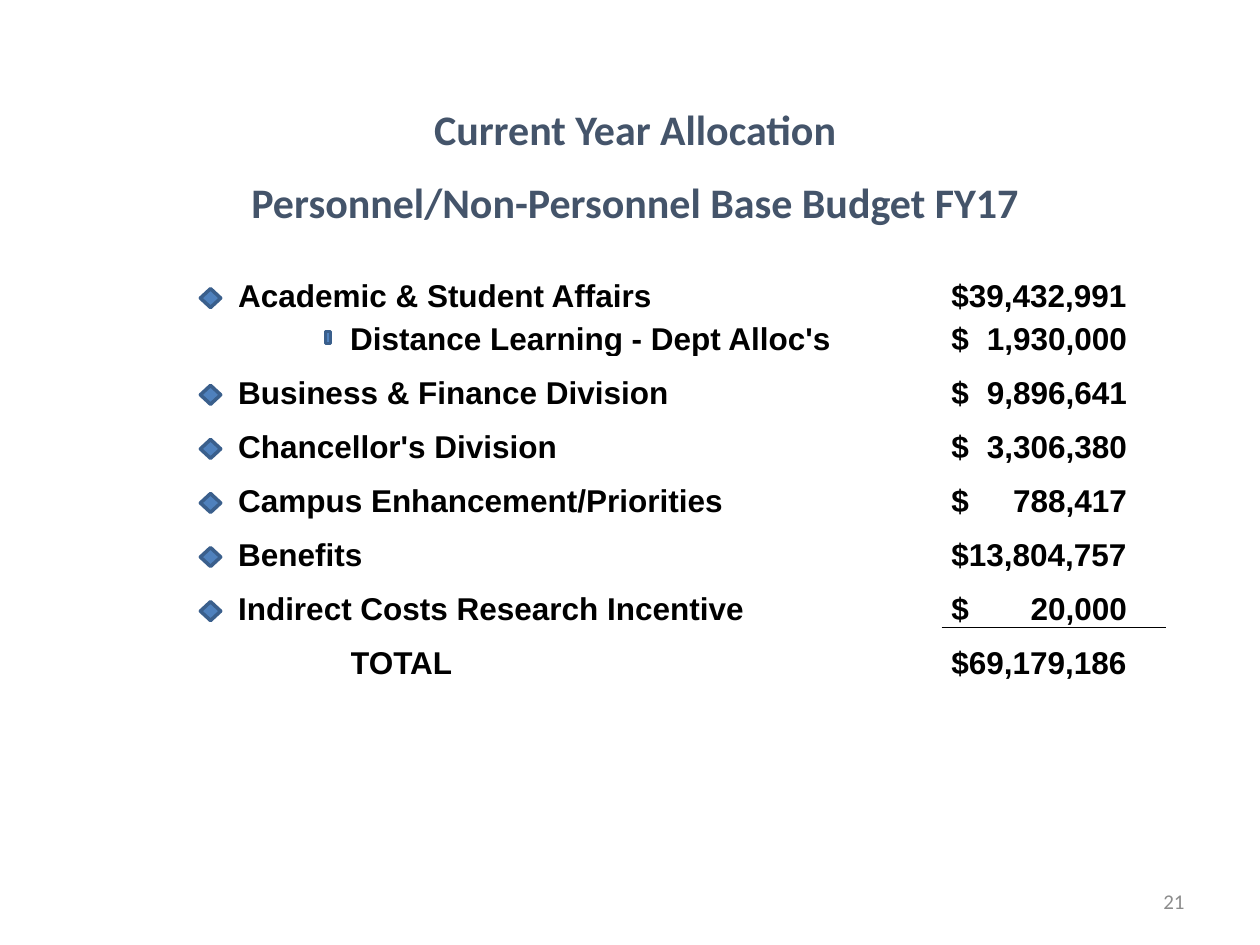
from lxml.etree import SubElement as Sub
from pptx import Presentation
from pptx.dml.color import RGBColor
from pptx.enum.shapes import MSO_SHAPE as Kind
from pptx.enum.text import MSO_ANCHOR as Anchor, PP_ALIGN as Align
from pptx.oxml import parse_xml
from pptx.oxml.ns import nsdecls, qn
from pptx.util import Cm, Pt

HEADS = ["Current Year Allocation", "Personnel/Non-Personnel Base Budget FY17"]
ITEMS = [
    ("Academic & Student Affairs", "$39,432,991", 1, 2),
    ("Distance Learning - Dept Alloc's", "$\t1,930,000", 2, 3),
    ("Business & Finance Division", "$\t9,896,641", 1, 2),
    ("Chancellor's Division", "$\t3,306,380", 1, 2),
    ("Campus Enhancement/Priorities", "$\t788,417", 1, 3),
    ("Benefits", "$13,804,757", 1, 2),
    ("Indirect Costs Research Incentive", "$\t20,000", 1, 3),
    ("TOTAL", "$69,179,186", 2, 2),
]
COLS = [2.69, 2.26, 7.77, 4.17, 4.5]
ROWS = [1.47, 1.47, 0.61, 1.09, 0.86] + [1.09] * 6
FIRST = 3


def color(code):
    """Turn a hex string into a colour."""
    return RGBColor.from_string(code)


def write(frame, text, size, face, code, bold=False, align=Align.LEFT):
    """Put one formatted line into a text frame."""
    line = frame.paragraphs[0]
    line.text = text
    line.alignment = align
    for run in line.runs:
        font = run.font
        font.size, font.name, font.bold = Pt(size), face, bold
        font.color.rgb = color(code)


def rule(cell, side):
    """Draw a thin black border on one side of a cell."""
    cell._tc.get_or_add_tcPr().insert(0, parse_xml(
        f'<a:{side} {nsdecls("a")} w="6350"><a:solidFill>'
        f'<a:srgbClr val="000000"/></a:solidFill></a:{side}>'))


def clear(cell):
    """Strip a cell of fill and margins and keep its blank line small."""
    cell.fill.background()
    cell.margin_left = cell.margin_right = 0
    cell.margin_top = cell.margin_bottom = 0
    cell.vertical_anchor = Anchor.BOTTOM
    Sub(cell.text_frame.paragraphs[0]._p, qn("a:endParaRPr"), sz="1000")


def amount(cell, text):
    """Write a sum with its digits set against a right tab."""
    cell.margin_left = Cm(0.18)
    write(cell.text_frame, text, 18, "Arial", "000000", True)
    props = cell.text_frame.paragraphs[0]._p.get_or_add_pPr()
    Sub(Sub(props, qn("a:tabLst")), qn("a:tab"), pos=str(Cm(3.54)), algn="r")


def budget(slide, left, top):
    """Build the budget table with its two heading rows."""
    grid = slide.shapes.add_table(
        len(ROWS), len(COLS), Cm(left), Cm(top),
        Cm(sum(COLS)), Cm(sum(ROWS))).table
    grid.first_row = grid.horz_banding = False
    for col, width in zip(grid.columns, COLS):
        col.width = Cm(width)
    for row, height in zip(grid.rows, ROWS):
        row.height = Cm(height)
    for cell in grid.iter_cells():
        clear(cell)
    last = len(COLS) - 1
    for row, text in enumerate(HEADS):
        cell = grid.cell(row, 0)
        cell.merge(grid.cell(row, last))
        write(cell.text_frame, text, 24, "Calibri", "44546A", True, Align.CENTER)
    for row, (name, total, start, end) in enumerate(ITEMS, FIRST):
        cell = grid.cell(row, start)
        if end > start:
            cell.merge(grid.cell(row, end))
        write(cell.text_frame, name, 18, "Arial", "000000", True)
        amount(grid.cell(row, last), total)
    rule(grid.cell(len(ROWS) - 2, last), "a:lnB"[2:])
    rule(grid.cell(len(ROWS) - 1, last), "lnT")


def mark(slide, kind, left, top, width, height):
    """Draw one blue marker."""
    shape = slide.shapes.add_shape(
        kind, Cm(left), Cm(top), Cm(width), Cm(height))
    shape.shadow.inherit = False
    shape.fill.solid()
    shape.fill.fore_color.rgb = color("4F81BD")
    shape.line.color.rgb = color("3A5F8C")
    shape.line.width = Pt(2)


def marks(slide, left, top):
    """Set a marker beside each item of the table."""
    for row, (name, total, start, end) in enumerate(ITEMS[:-1], FIRST):
        y = top + sum(ROWS[:row])
        if start == 1:
            mark(slide, Kind.DIAMOND, left + 1.93, y + 0.57, 0.41, 0.38)
        else:
            mark(slide, Kind.MATH_MINUS, left + 4.44, y - 0.07, 0.13, 1.07)


def number(slide, left, top, width, height):
    """Place the page number."""
    frame = slide.shapes.add_textbox(
        Cm(left), Cm(top), Cm(width), Cm(height)).text_frame
    frame.word_wrap = True
    frame.vertical_anchor = Anchor.MIDDLE
    write(frame, "21", 12, "Calibri", "8C8C8C", align=Align.RIGHT)


def main():
    """Build and save the slide."""
    deck = Presentation()
    deck.slide_width, deck.slide_height = Cm(25.4), Cm(19.05)
    slide = deck.slides.add_slide(deck.slide_layouts[6])
    number(slide, 18.21, 17.65, 5.92, 1.02)
    budget(slide, 2.11, 1.7)
    marks(slide, 2.11, 1.7)
    deck.save("out.pptx")


if __name__ == "__main__":
    main()
